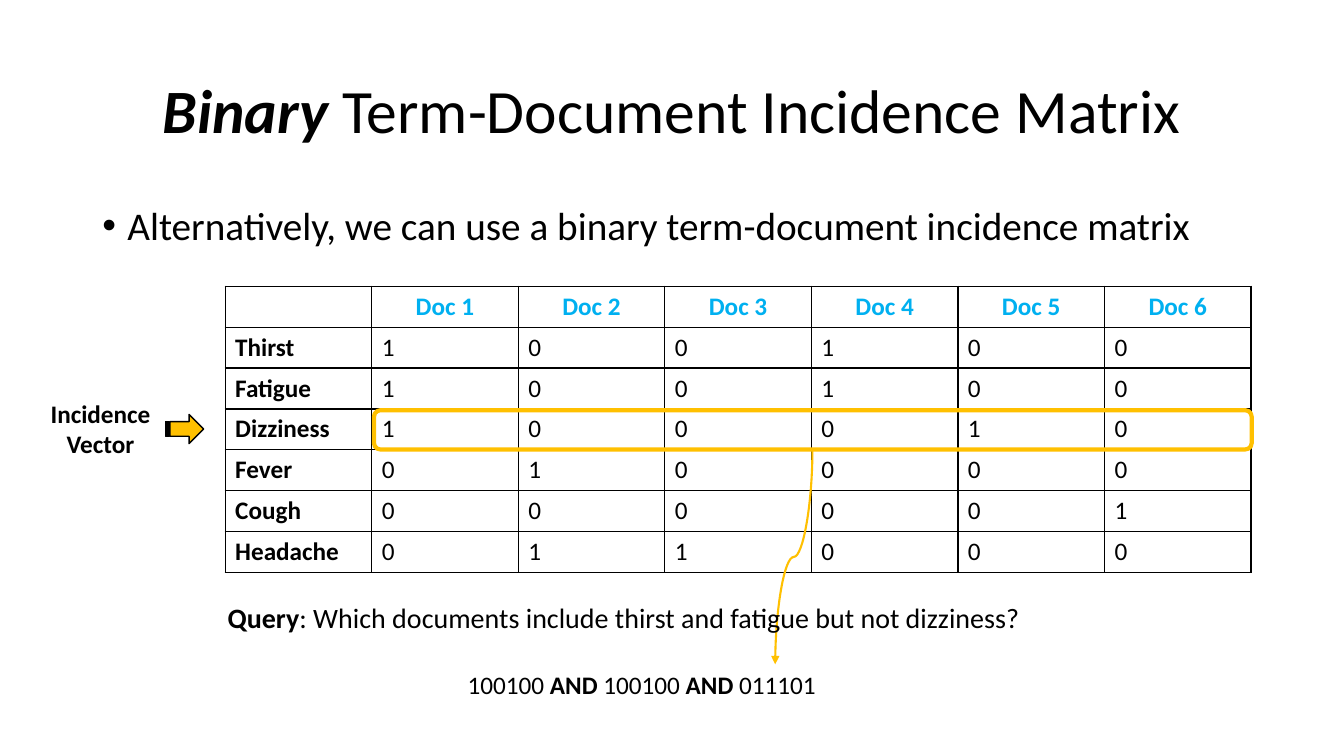
"""Build the binary term-document incidence matrix slide."""
from lxml import etree
from pptx import Presentation
from pptx.dml.color import RGBColor
from pptx.enum import shapes, text
from pptx.oxml import ns
from pptx.util import Pt

COLS = {"ink": "000000", "head": "00B0F0", "gold": "FFC000"}
BOLD = {"bold": True}
MID = text.PP_ALIGN.CENTER


def write(para, runs, size, ink="ink", **form):
    """Add (words, format) runs to a paragraph."""
    for name, value in form.items():
        setattr(para, name, value)
    for words, extra in runs:
        run = para.add_run()
        run.text = words
        look = {"name": "Calibri", "size": Pt(size), "bold": False, **extra}
        for name, value in look.items():
            setattr(run.font, name, value)
        run.font.color.rgb = RGBColor.from_string(COLS[ink])


def paint(line, ink, width):
    """Set the colour and width of a line."""
    line.color.rgb = RGBColor.from_string(COLS[ink])
    line.width = Pt(width)


deck = Presentation()
deck.slide_width, deck.slide_height = Pt(960), Pt(540)
slide = deck.slides.add_slide(deck.slide_layouts[5])
parts = slide.shapes

title = parts.title
spot = {"left": 66, "top": 28.8, "width": 828, "height": 104.4}
for name, value in spot.items():
    setattr(title, name, Pt(value))
title.text_frame.vertical_anchor = text.MSO_ANCHOR.MIDDLE
write(title.text_frame.paragraphs[0],
      [("Binary", {"bold": True, "italic": True}),
       (" Term-Document Incidence Matrix", {})],
      44, alignment=MID, line_spacing=0.9)

terms = {
    "Thirst": "100100",
    "Fatigue": "100100",
    "Dizziness": "100010",
    "Fever": "010000",
    "Cough": "000001",
    "Headache": "011000",
}
rows = [["", *(f"Doc {n}" for n in range(1, 7))]]
rows += [[term, *bits] for term, bits in terms.items()]
wide, high = 104.7, 29.2
grid = parts.add_table(7, 7, Pt(160.8), Pt(204.5), Pt(7 * wide), Pt(7 * high)).table
for col in grid.columns:
    col.width = Pt(wide)
for r, row in enumerate(rows):
    grid.rows[r].height = Pt(high)
    for c, words in enumerate(row):
        cell = grid.cell(r, c)
        props = cell._tc.get_or_add_tcPr()
        for side in ("lnL", "lnR", "lnT", "lnB"):
            edge = etree.SubElement(props, ns.qn(f"a:{side}"), w=str(Pt(1)))
            fill = etree.SubElement(edge, ns.qn("a:solidFill"))
            etree.SubElement(fill, ns.qn("a:srgbClr"), val=COLS["ink"])
        cell.fill.background()
        if words:
            head = r == 0
            write(cell.text_frame.paragraphs[0],
                  [(words, {"bold": head or c == 0})], 18,
                  "head" if head else "ink",
                  alignment=MID if head else text.PP_ALIGN.LEFT)

kind = shapes.MSO_SHAPE
frame = parts.add_shape(kind.ROUNDED_RECTANGLE, Pt(267.1), Pt(293), Pt(627), Pt(28.1))
frame.fill.background()
paint(frame.line, "gold", 3)
arrow = parts.add_shape(kind.STRIPED_RIGHT_ARROW, Pt(118.1), Pt(296), Pt(27.4), Pt(20.9))
arrow.fill.solid()
arrow.fill.fore_color.rgb = RGBColor.from_string(COLS["gold"])
paint(arrow.line, "ink", 1)
for shape in (frame, arrow):
    shape.shadow.inherit = False

link = parts.add_connector(shapes.MSO_CONNECTOR.CURVE,
                           Pt(490.3), Pt(384.5), Pt(643.7), Pt(411.1))
paint(link.line, "gold", 1.5)
props = link._element.spPr
props.find(ns.qn("a:xfrm")).set("rot", str(90 * 60000))
etree.SubElement(props.find(ns.qn("a:ln")), ns.qn("a:tailEnd"), type="triangle")
etree.SubElement(props, ns.qn("a:effectLst"))

notes = [
    ((155.5, 425.5, 586, 31.7), 20, text.PP_ALIGN.LEFT,
     [[("Query", BOLD),
       (": Which documents include thirst and fatigue but not dizziness?", {})]]),
    ((326.9, 474.5, 274.3, 28.8), 18, text.PP_ALIGN.LEFT,
     [[("100100 ", {}), ("AND ", BOLD), ("100100 ", {}),
       ("AND ", BOLD), ("011101", {})]]),
    ((26.8, 280.8, 90, 51.1), 18, MID,
     [[("Incidence", BOLD)], [("Vector", BOLD)]]),
]
for place, size, align, lines in notes:
    box = parts.add_textbox(*map(Pt, place)).text_frame
    box.word_wrap = False
    box.auto_size = text.MSO_AUTO_SIZE.SHAPE_TO_FIT_TEXT
    para = box.paragraphs[0]
    for n, runs in enumerate(lines):
        if n:
            para.add_line_break()
        write(para, runs, size, alignment=align)

body = parts.add_textbox(Pt(66), Pt(144), Pt(844), Pt(367)).text_frame
body.word_wrap = True
para = body.paragraphs[0]
props = para._p.get_or_add_pPr()
props.set("marL", str(Pt(18)))
props.set("indent", str(-Pt(18)))
etree.SubElement(props, ns.qn("a:buFont"), typeface="Arial")
etree.SubElement(props, ns.qn("a:buChar"), char="•")
write(para,
      [("Alternatively, we can use a binary term-document incidence matrix", {})],
      28, line_spacing=0.9)

deck.save("out.pptx")
